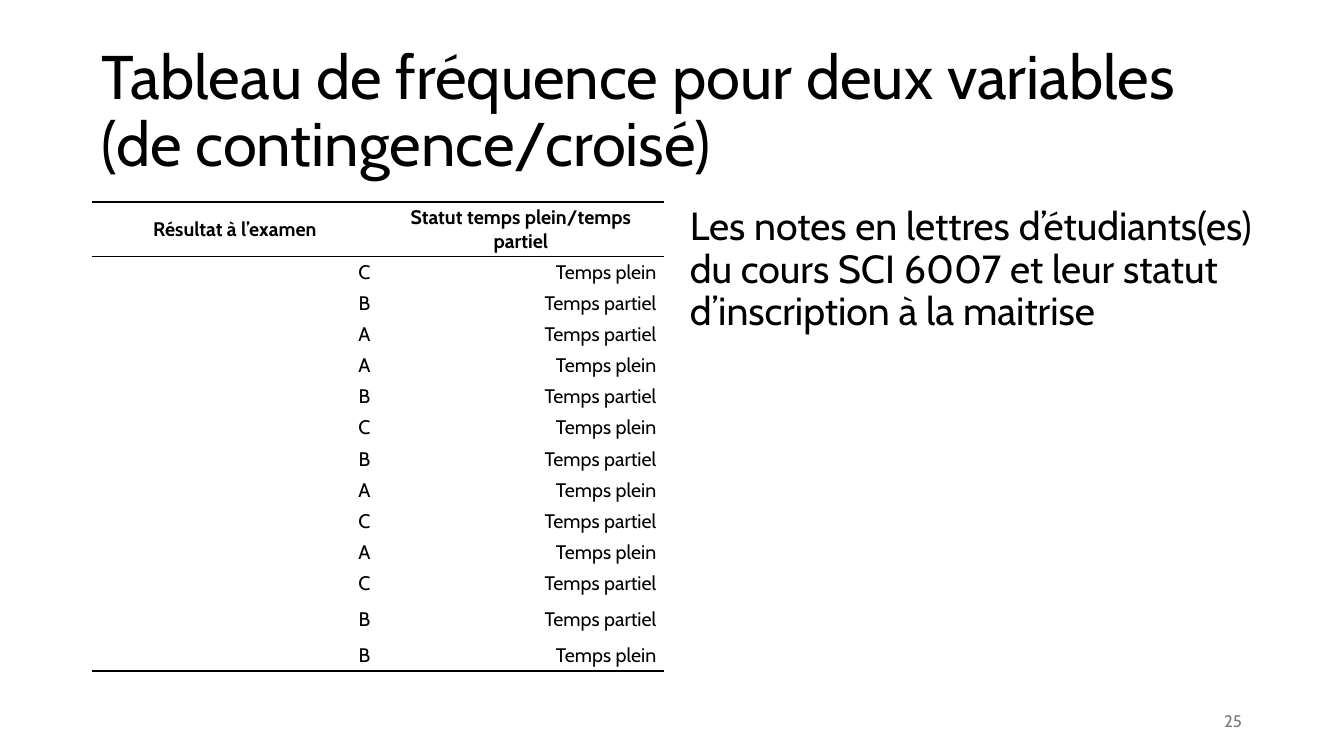
"""Build the slide on a two-variable frequency table."""
from dataclasses import dataclass

from lxml.etree import SubElement
from pptx import Presentation
from pptx.dml.color import RGBColor
from pptx.enum.text import MSO_ANCHOR as Anchor, PP_ALIGN as Align
from pptx.oxml.ns import qn
from pptx.slide import Slide
from pptx.table import _Cell as Cell
from pptx.text.text import TextFrame
from pptx.util import Emu, Pt

EMU_PER_PX = 914400 / 100.8
FONT = "Cabin"
BLACK, GREY = "000000", "797979"
HEADERS = ("Résultat à l’examen", "Statut temps plein/temps partiel")
GRADES = "CBAABCBACACBB"
FULL, PARTIAL = "Temps plein", "Temps partiel"
STATUSES = (FULL, PARTIAL, PARTIAL, FULL, PARTIAL, FULL, PARTIAL,
            FULL, PARTIAL, FULL, PARTIAL, PARTIAL, FULL)
ROW_HEIGHTS = (51, *[30] * 11, 41, 30)
TABLE_LEFT, TABLE_TOP, COLUMN_WIDTH = 92, 202, 286


@dataclass(frozen=True)
class TextBlock:
    text: str
    left: int
    top: int
    width: int
    height: int
    size: int
    color: str = BLACK
    align: Align = Align.LEFT
    anchor: Anchor = Anchor.MIDDLE
    line_spacing: float = 0.9
    space_before: int = 0


BLOCKS = (
    TextBlock("Tableau de fréquence pour deux variables (de contingence/croisé)",
              92, 40, 1159, 146, 44),
    TextBlock("Les notes en lettres d’étudiants(es) du cours SCI 6007 et leur "
              "statut d’inscription à la maitrise",
              680, 202, 599, 480, 28, anchor=Anchor.TOP, space_before=10),
    TextBlock("25", 950, 701, 302, 40, 12, GREY, Align.RIGHT, line_spacing=1.0),
)


def px(length: int) -> Emu:
    """Turn pixels into EMU."""
    return Emu(round(length * EMU_PER_PX))


def rgb(color: str) -> RGBColor:
    """Turn a hex string into a colour."""
    return RGBColor.from_string(color)


def write(frame: TextFrame, text: str, size: int, color: str, align: Align,
          bold: bool = False) -> None:
    """Put one formatted paragraph into a text frame."""
    frame.text = text
    paragraph = frame.paragraphs[0]
    paragraph.alignment = align
    font = paragraph.runs[0].font
    font.name, font.size, font.bold = FONT, Pt(size), bold
    font.color.rgb = rgb(color)


def add_text(slide: Slide, block: TextBlock) -> None:
    """Draw a text block."""
    box = slide.shapes.add_textbox(px(block.left), px(block.top),
                                   px(block.width), px(block.height))
    frame = box.text_frame
    frame.word_wrap = True
    frame.vertical_anchor = block.anchor
    write(frame, block.text, block.size, block.color, block.align)
    paragraph = frame.paragraphs[0]
    paragraph.line_spacing = block.line_spacing
    paragraph.space_before = Pt(block.space_before)


def set_borders(cell: Cell, ruled: str) -> None:
    """Rule the named sides of a cell and clear the others."""
    properties = cell._tc.get_or_add_tcPr()
    for side in "LRTB":
        line = SubElement(properties, qn(f"a:ln{side}"), w=str(Pt(1)))
        if side in ruled:
            fill = SubElement(line, qn("a:solidFill"))
            SubElement(fill, qn("a:srgbClr"), val=BLACK)
        else:
            SubElement(line, qn("a:noFill"))


def add_frequency_table(slide: Slide) -> None:
    """Draw the table of grades and enrolment statuses."""
    rows = [HEADERS, *zip(GRADES, STATUSES)]
    table = slide.shapes.add_table(
        len(rows), len(HEADERS), px(TABLE_LEFT), px(TABLE_TOP),
        px(COLUMN_WIDTH * len(HEADERS)), px(sum(ROW_HEIGHTS))).table
    table.first_row = table.horz_banding = False
    for column in table.columns:
        column.width = px(COLUMN_WIDTH)
    ruled_sides = {0: "TB", 1: "T", len(rows) - 1: "B"}
    for index, (values, height) in enumerate(zip(rows, ROW_HEIGHTS)):
        table.rows[index].height = px(height)
        is_header = index == 0
        for cell, value in zip(table.rows[index].cells, values):
            cell.margin_left = cell.margin_right = Pt(5.4)
            cell.margin_top = cell.margin_bottom = Pt(2.7)
            cell.vertical_anchor = Anchor.MIDDLE
            set_borders(cell, ruled_sides.get(index, ""))
            cell.fill.background()
            write(cell.text_frame, value, 14, BLACK,
                  Align.CENTER if is_header else Align.RIGHT, is_header)


def main() -> None:
    """Build and save the presentation."""
    presentation = Presentation()
    presentation.slide_width, presentation.slide_height = px(1344), px(756)
    slide = presentation.slides.add_slide(presentation.slide_layouts[6])
    title, *others = BLOCKS
    add_text(slide, title)
    add_frequency_table(slide)
    for block in others:
        add_text(slide, block)
    presentation.save("out.pptx")


if __name__ == "__main__":
    main()
